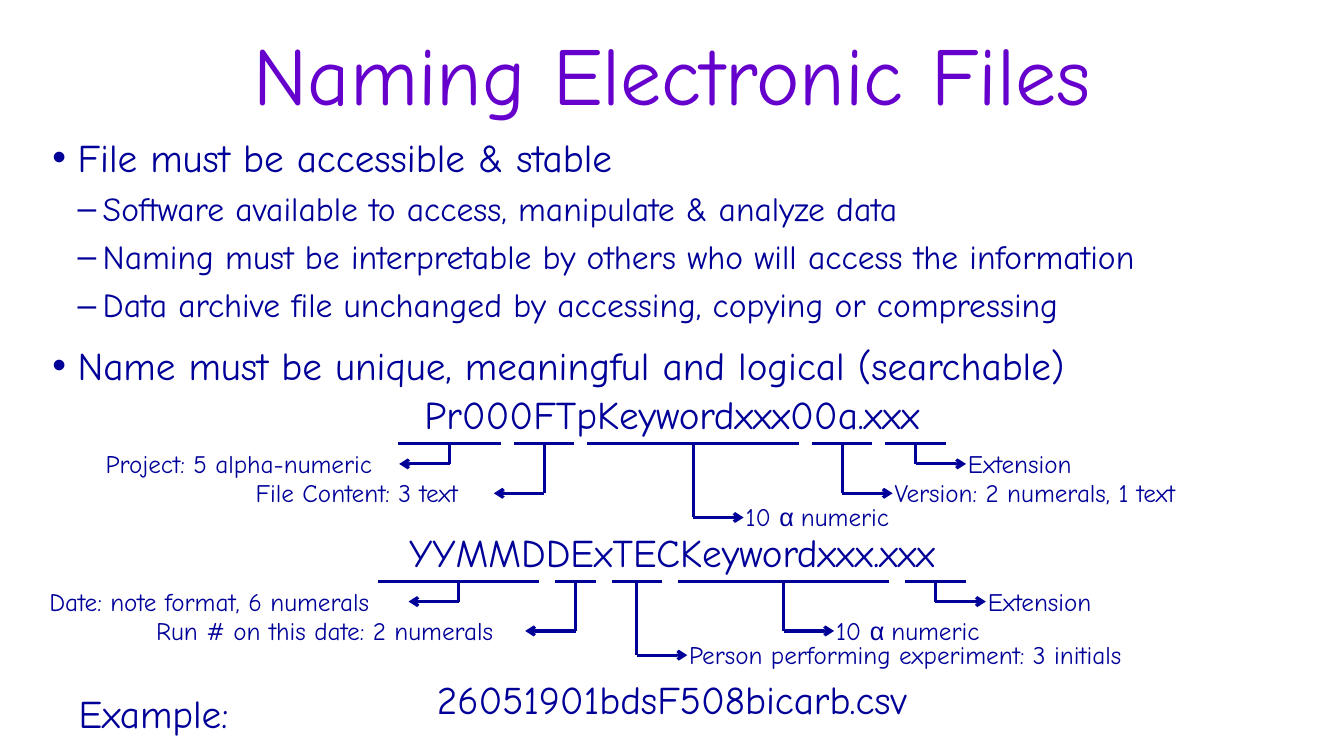
from lxml.etree import SubElement
from pptx import Presentation
from pptx.dml.color import RGBColor
from pptx.enum.shapes import MSO_CONNECTOR
from pptx.enum.text import MSO_ANCHOR, PP_ALIGN
from pptx.oxml.ns import qn
from pptx.util import Cm, Pt

WIDE, HIGH = 33.87, 19.05
HUES = {"title": "6600CC", "text": "000099"}
FONTS = {
    "title": {"name": "Comic Neue", "size": Pt(58.7)},
    "main": {"name": "Comic Neue", "size": Pt(28)},
    "sub": {"name": "Comic Neue", "size": Pt(24)},
    "label": {"name": "Comic Neue", "size": Pt(18)},
    "greek": {"name": "Arial", "size": Pt(18)},
}
DROPS = (0.51, 1.25, 1.86, 1.25, 0.51)
LEFTS = 2  # the first parts of a name are labelled on the left
ARROW = 1.27

POINTS = (
    ("main", 0, "File must be accessible & stable"),
    ("sub", 5.6, "Software available to access, manipulate & analyze data"),
    ("sub", 5.6, "Naming must be interpretable by others who will access the information"),
    ("sub", 5.6, "Data archive file unchanged by accessing, copying or compressing"),
    ("main", 12, "Name must be unique, meaningful and logical (searchable)"),
)
# Each part: length of its rule, label, width of the label
PROJECT = (
    (2.59, "Project: 5 alpha-numeric", 7.85),
    (1.52, "File Content: 3 text", 6.45),
    (5.33, "10 α numeric", 4.29),
    (1.52, "Version: 2 numerals, 1 text", 8.53),
    (1.52, "Extension", 3.45),
)
DATED = (
    (4.06, "Date: note format, 6 numerals", 9.5),
    (1.02, "Run # on this date: 2 numerals", 9.75),
    (1.27, "Person performing experiment: 3 initials", 12.55),
    (5.33, "10 α numeric", 4.29),
    (1.52, "Extension", 3.45),
)


def paint(font, kind, hue="text"):
    for key, value in FONTS[kind].items():
        setattr(font, key, value)
    font.color.rgb = RGBColor.from_string(HUES[hue])


def frame(slide, x, y, w, h):
    body = slide.shapes.add_textbox(Cm(x), Cm(y), Cm(w), Cm(h)).text_frame
    body.word_wrap = True
    return body


def write(slide, box, text, kind, align=PP_ALIGN.LEFT, hue="text"):
    """Put one line of text in a box, with α set in the Greek font."""
    body = frame(slide, *box)
    para = body.paragraphs[0]
    para.alignment = align
    head, greek, rest = text.partition("α ")
    for part, font in ((head, kind), (greek, "greek"), (rest, kind)):
        if part:
            run = para.add_run()
            run.text = part
            paint(run.font, font, hue)
    return body


def stroke(slide, x1, y1, x2, y2, arrow=False):
    link = slide.shapes.add_connector(
        MSO_CONNECTOR.STRAIGHT, Cm(x1), Cm(y1), Cm(x2), Cm(y2))
    link.line.width = Pt(2.25)
    link.line.color.rgb = RGBColor.from_string(HUES["text"])
    if arrow:
        SubElement(link.line._get_or_add_ln(), qn("a:tailEnd"), type="arrow")
    SubElement(link._element.spPr, qn("a:effectLst"))


def title(slide, box):
    body = write(slide, box, "Naming Electronic Files", "title",
                 PP_ALIGN.CENTER, "title")
    body.vertical_anchor = MSO_ANCHOR.MIDDLE


def points(slide, box):
    body = frame(slide, *box)
    for row, (kind, space, text) in enumerate(POINTS):
        para = body.add_paragraph() if row else body.paragraphs[0]
        level = int(kind == "sub")
        para.level = level
        props = para._p.get_or_add_pPr()
        props.set("marL", str(Cm(0.635 * (level + 1))))
        props.set("indent", str(Cm(-0.635)))
        para.space_before = Pt(space)
        SubElement(props, qn("a:buFont"), typeface="Arial")
        SubElement(props, qn("a:buChar"), char="•–"[level])
        para.text = text
        paint(para.font, kind)
        paint(para.runs[0].font, kind)


def scheme(slide, box, name, parts, gap):
    """Draw a file name over a row of rules, each led to its label."""
    x, y, w, h = box
    write(slide, (x, y, w, 1.44), name, "main", PP_ALIGN.CENTER)
    base = y + 1.46
    span = sum(part[0] for part in parts) + gap * (len(parts) - 1)
    left = x + (w - span) / 2
    for col, ((size, label, wide), drop) in enumerate(zip(parts, DROPS)):
        stem, low = left + size / 2, base + drop
        side = -1 if col < LEFTS else 1
        tip = stem + side * ARROW
        start = tip - 0.2 if side > 0 else tip + 0.2 - wide
        stroke(slide, left, base, left + size, base)
        stroke(slide, stem, base, stem, low)
        stroke(slide, stem, low, tip, low, arrow=True)
        write(slide, (start, low - 0.52, wide, 1.02), label, "label")
        left += size + gap


def sample(slide, box):
    x, y, w, h = box
    write(slide, (x + 1.73, y + 0.36, 4.67, h), "Example:", "main")
    write(slide, box, "26051901bdsF508bicarb.csv", "main", PP_ALIGN.CENTER)


def main():
    deck = Presentation()
    deck.slide_width, deck.slide_height = Cm(WIDE), Cm(HIGH)
    slide = deck.slides.add_slide(deck.slide_layouts[6])
    title(slide, (0, 0.25, WIDE, 3.18))
    points(slide, (1.07, 3.23, 31.75, 6.6))
    scheme(slide, (0, 9.72, WIDE, 3.4), "Pr000FTpKeywordxxx00a.xxx", PROJECT, 0.33)
    scheme(slide, (0, 13.19, WIDE, 3.4), "YYMMDDExTECKeywordxxx.xxx", DATED, 0.4)
    sample(slide, (0, 16.89, WIDE, 1.44))
    deck.save("out.pptx")


if __name__ == "__main__":
    main()
